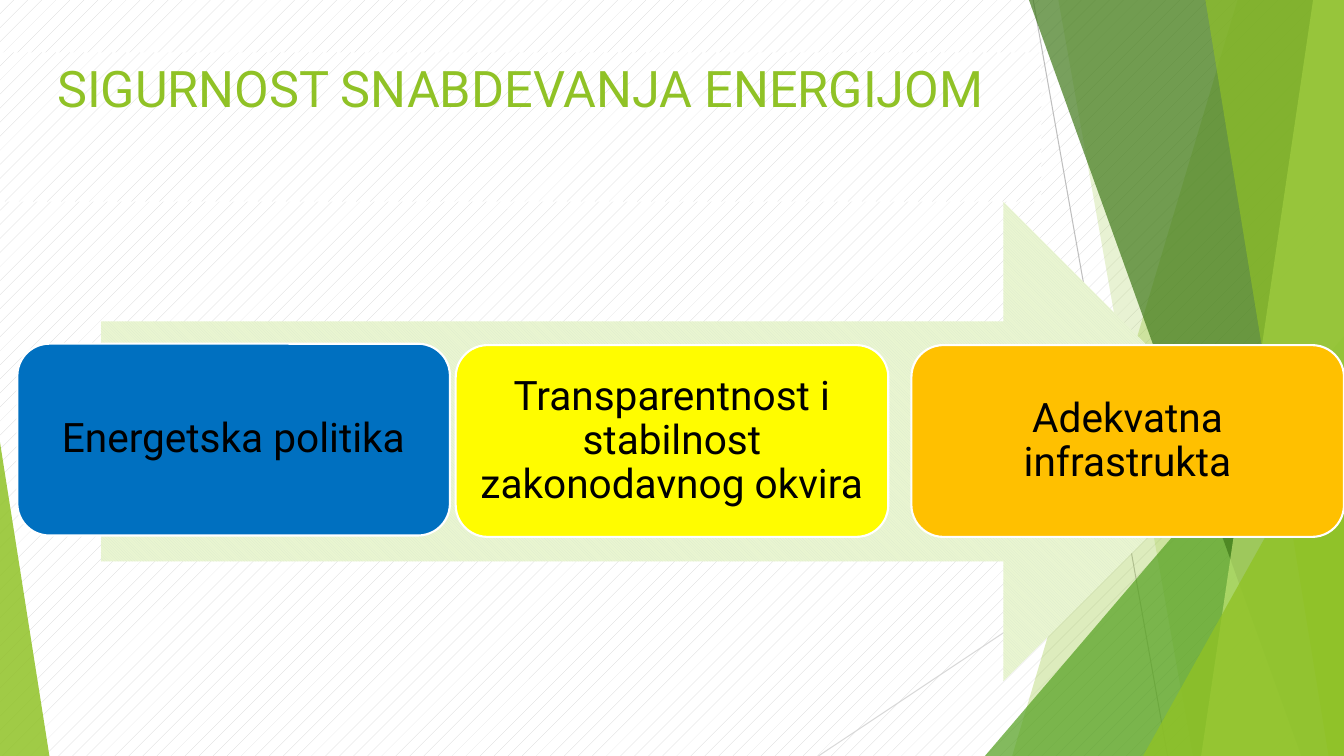
import pptx
import pptx.dml.color
import pptx.enum.dml
import pptx.enum.shapes
import pptx.enum.text
import pptx.oxml.ns
import pptx.util
import lxml.etree

Pt = pptx.util.Pt
SHAPES = pptx.enum.shapes.MSO_SHAPE
PATTERNS = pptx.enum.dml.MSO_PATTERN
ALIGN = pptx.enum.text.PP_ALIGN
ANCHOR = pptx.enum.text.MSO_ANCHOR
WIDTH, HEIGHT = 960, 540
GREEN = "90C226"
PAPER = (PATTERNS.PERCENT_5, "D3D3D3", "FFFFFF")


def colour(value):
    return pptx.dml.color.RGBColor.from_string(value)


def apply(target, values):
    for name, value in values.items():
        setattr(target, name, value)


class SlideBuilder:
    font = "Roboto"

    def __init__(self, slide):
        self.slide = slide
        self.shapes = slide.shapes

    def pattern(self, fill, pattern, front, back):
        fill.patterned()
        fill.pattern = pattern
        fill.fore_color.rgb = colour(front)
        fill.back_color.rgb = colour(back)

    def paint(self, shape, value, opacity=100):
        shape.shadow.inherit = False
        shape.line.fill.background()
        shape.fill.solid()
        shape.fill.fore_color.rgb = colour(value)
        if opacity < 100:
            solid = shape._element.spPr.find(pptx.oxml.ns.qn("a:solidFill"))
            alpha = lxml.etree.SubElement(solid[0], pptx.oxml.ns.qn("a:alpha"))
            alpha.set("val", str(opacity * 1000))

    def line(self, start, end, value):
        ends = [Pt(number) for number in (*start, *end)]
        connector = self.shapes.add_connector(pptx.enum.shapes.MSO_CONNECTOR.STRAIGHT, *ends)
        connector.line.color.rgb = colour(value)
        connector.line.width = Pt(0.75)
        properties = connector._element.spPr
        lxml.etree.SubElement(properties, pptx.oxml.ns.qn("a:effectLst"))

    def band(self, top_x, bottom_x, value, opacity):
        builder = self.shapes.build_freeform(Pt(top_x), 0)
        corners = [(WIDTH, 0), (WIDTH, HEIGHT), (bottom_x, HEIGHT)]
        builder.add_line_segments([(Pt(x), Pt(y)) for x, y in corners], close=True)
        self.paint(builder.convert_to_shape(), value, opacity)

    def triangle(self, left, top, right, apex, value, opacity):
        shape = self.preset(SHAPES.ISOSCELES_TRIANGLE, left, top, right - left, HEIGHT - top)
        shape.adjustments[0] = apex
        self.paint(shape, value, opacity)

    def preset(self, kind, *box):
        return self.shapes.add_shape(kind, *[Pt(length) for length in box])

    def label(self, shape, text, size, value, frame_format, paragraph_format):
        frame = shape.text_frame
        frame.text = text
        apply(frame, {"word_wrap": True, "auto_size": pptx.enum.text.MSO_AUTO_SIZE.NONE, **frame_format})
        paragraph = frame.paragraphs[0]
        apply(paragraph, {"alignment": ALIGN.CENTER, **paragraph_format})
        font = paragraph.runs[0].font
        apply(font, {"name": self.font, "size": Pt(size)})
        font.color.rgb = colour(value)

    def title(self, text, left, top, width, height):
        title = self.shapes.title
        apply(title, {"left": Pt(left), "top": Pt(top), "width": Pt(width), "height": Pt(height)})
        self.pattern(title.fill, *PAPER)
        self.label(title, text, 36, GREEN, {"vertical_anchor": ANCHOR.TOP}, {})
        self.shapes._spTree.append(title._element)

    def arrow(self, *box):
        arrow = self.preset(SHAPES.RIGHT_ARROW, *box)
        arrow.shadow.inherit = False
        arrow.line.fill.background()
        self.pattern(arrow.fill, PATTERNS.LIGHT_DOWNWARD_DIAGONAL, "DBE9CD", "EAF6D1")

    def card(self, text, value, *box):
        card = self.preset(SHAPES.ROUNDED_RECTANGLE, *box)
        self.paint(card, value)
        card.line.color.rgb = colour("FFFFFF")
        card.line.width = Pt(1.5)
        sides = ("left", "top", "right", "bottom")
        margins = {f"margin_{side}": Pt(8.6) for side in sides}
        self.label(card, text, 29, "000000",
                   {"vertical_anchor": ANCHOR.MIDDLE, **margins}, {"line_spacing": 0.9})


def main():
    presentation = pptx.Presentation()
    apply(presentation, {"slide_width": Pt(WIDTH), "slide_height": Pt(HEIGHT)})
    slide = presentation.slides.add_slide(presentation.slide_layouts[5])
    builder = SlideBuilder(slide)
    builder.pattern(slide.background.fill, *PAPER)

    builder.line((738, 0), (834, HEIGHT), "BFBFBF")
    builder.line((WIDTH, 290), (584.6, HEIGHT), "D9D9D9")
    builder.band(884, 723, GREEN, 30)
    builder.band(756, 852, GREEN, 20)
    builder.triangle(703.5, 240, WIDTH, 1, "54A021", 72)
    builder.band(735, 929.5, "3F7819", 70)
    builder.band(938, 858, "C0E474", 70)
    builder.band(861, 949, GREEN, 65)
    builder.triangle(816.5, 283, WIDTH, 1, GREEN, 80)
    builder.triangle(0, 316, 35.3, 0, GREEN, 85)

    builder.title("SIGURNOST SNABDEVANJA ENERGIJOM", 0, 37.4, 743.8, 106.6)
    builder.arrow(72, 144, 816, 342.7)
    cards = [
        ("Energetska politika", "0070C0", 12.4, 245.5),
        ("Transparentnost i stabilnost zakonodavnog okvira", "FFFC00", 325.5, 246.5),
        ("Adekvatna infrastrukta", "FFC000", 651, 246.5),
    ]
    for text, value, left, top in cards:
        builder.card(text, value, left, top, 309, 137)

    presentation.save("out.pptx")


if __name__ == "__main__":
    main()
